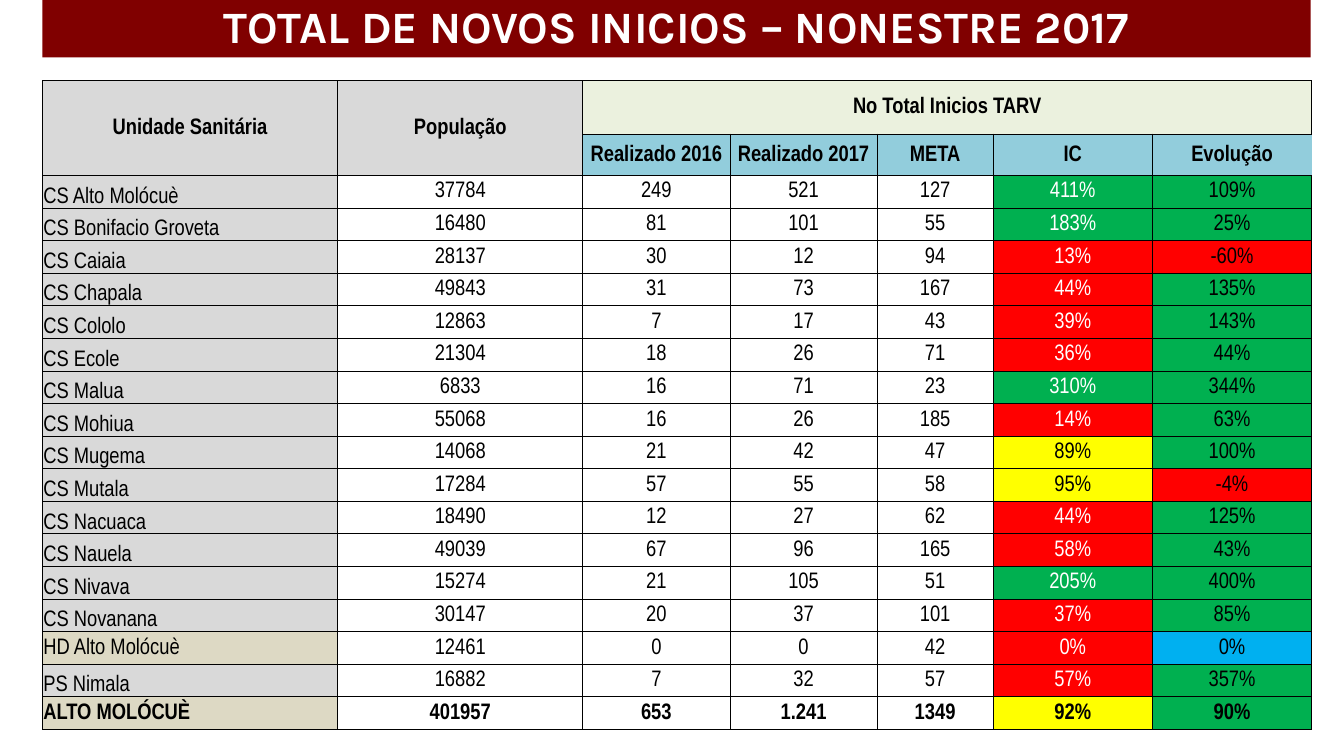
from lxml import etree
from pptx import Presentation
from pptx import util as u
from pptx.dml.color import RGBColor
from pptx.enum import shapes, text
from pptx.oxml import ns

GREEN, RED, YELLOW, BLUE = "00B050", "FF0000", "FFFF00", "00B0F0"
GREY, BEIGE, PALE_GREEN, TEAL = "D9D9D9", "DDD9C4", "EBF1DE", "92CDDC"
BLACK, WHITE, MAROON = "000000", "FFFFFF", "800000"

COLUMN_WIDTHS = [2.93, 2.43, 1.46, 1.46, 1.15, 1.58, 1.58]
TABLE_BOX = (0.42, 0.8, 12.58, 6.44)
HEADER_HEIGHTS = [0.53, 0.41]
SUBHEADINGS = ["Realizado 2016", "Realizado 2017", "META", "IC", "Evolução"]

# Unit, population, 2016, 2017, target, IC %, evolution %
UNITS = [
    ("CS Alto Molócuè", "37784", "249", "521", "127", 411, 109),
    ("CS Bonifacio Groveta", "16480", "81", "101", "55", 183, 25),
    ("CS Caiaia", "28137", "30", "12", "94", 13, -60),
    ("CS Chapala", "49843", "31", "73", "167", 44, 135),
    ("CS Cololo", "12863", "7", "17", "43", 39, 143),
    ("CS Ecole", "21304", "18", "26", "71", 36, 44),
    ("CS Malua", "6833", "16", "71", "23", 310, 344),
    ("CS Mohiua", "55068", "16", "26", "185", 14, 63),
    ("CS Mugema", "14068", "21", "42", "47", 89, 100),
    ("CS Mutala", "17284", "57", "55", "58", 95, -4),
    ("CS Nacuaca", "18490", "12", "27", "62", 44, 125),
    ("CS Nauela", "49039", "67", "96", "165", 58, 43),
    ("CS Nivava", "15274", "21", "105", "51", 205, 400),
    ("CS Novanana", "30147", "20", "37", "101", 37, 85),
    ("HD Alto Molócuè", "12461", "0", "0", "42", 0, 0),
    ("PS Nimala", "16882", "7", "32", "57", 57, 357),
    ("ALTO MOLÓCUÈ", "401957", "653", "1.241", "1349", 92, 90),
]


def rgb(value):
    return RGBColor.from_string(value)


def coverage_fill(percent):
    return GREEN if percent > 100 else YELLOW if percent >= 80 else RED


def evolution_fill(percent):
    return GREEN if percent > 0 else RED if percent < 0 else BLUE


class SlideBuilder:
    CELL_FORMAT = {
        "margin_left": u.Inches(0.01),
        "margin_right": u.Inches(0.01),
        "margin_top": u.Inches(0.01),
        "margin_bottom": 0,
    }

    def __init__(self, presentation):
        self.slide = presentation.slides.add_slide(presentation.slide_layouts[6])

    def add_words(self, paragraph, words, align=text.PP_ALIGN.CENTER, color=BLACK,
                  **font_format):
        run = paragraph.add_run()
        run.text = words
        paragraph.alignment = align
        run.font.color.rgb = rgb(color)
        for name, value in font_format.items():
            setattr(run.font, name, value)

    def banner(self, words, left, top, width, height):
        shape = self.slide.shapes.add_shape(
            shapes.MSO_SHAPE.RECTANGLE, *map(u.Inches, (left, top, width, height)))
        shape.shadow.inherit = False
        shape.fill.solid()
        shape.fill.fore_color.rgb = rgb(MAROON)
        shape.line.fill.background()
        shape.text_frame.vertical_anchor = text.MSO_ANCHOR.MIDDLE
        paragraph = shape.text_frame.paragraphs[0]
        paragraph.line_spacing = 0.9
        self.add_words(paragraph, words, color=WHITE, name="Karla", size=u.Pt(32), bold=True)

    def table(self, box, widths, heights):
        table = self.slide.shapes.add_table(
            len(heights), len(widths), *map(u.Inches, box)).table
        table.first_row = table.horz_banding = False
        for column, width in zip(table.columns, widths):
            column.width = u.Inches(width)
        for row, height in zip(table.rows, heights):
            row.height = u.Inches(height)
        return table

    def borders(self, cell, sides):
        properties = cell._tc.get_or_add_tcPr()
        for side in "LRTB":
            line = etree.SubElement(properties, ns.qn("a:ln" + side), w=str(u.Pt(0.5)))
            if side in sides:
                fill = etree.SubElement(line, ns.qn("a:solidFill"))
                etree.SubElement(fill, ns.qn("a:srgbClr"), val=BLACK)
            else:
                etree.SubElement(line, ns.qn("a:noFill"))

    def cell(self, cell, words, fill=None, anchor=text.MSO_ANCHOR.MIDDLE,
             sides="LRTB", **style):
        for name, value in self.CELL_FORMAT.items():
            setattr(cell, name, value)
        cell.vertical_anchor = anchor
        self.borders(cell, sides)
        if fill:
            cell.fill.solid()
            cell.fill.fore_color.rgb = rgb(fill)
        else:
            cell.fill.background()
        if words:
            self.add_words(cell.text_frame.paragraphs[0], words,
                           name="Arial Narrow", size=u.Pt(16), **style)


def main():
    presentation = Presentation()
    presentation.slide_width = u.Inches(13.33)
    presentation.slide_height = u.Inches(7.5)
    builder = SlideBuilder(presentation)

    # Title banner
    builder.banner("TOTAL DE NOVOS INICIOS – NONESTRE 2017", 0.42, 0, 12.58, 0.57)

    # Table grid
    row_height = (TABLE_BOX[3] - sum(HEADER_HEIGHTS)) / len(UNITS)
    table = builder.table(TABLE_BOX, COLUMN_WIDTHS,
                          HEADER_HEIGHTS + [row_height] * len(UNITS))

    # Two header rows
    headings = ["Unidade Sanitária", "População", "No Total Inicios TARV"] + [""] * 4
    for column, heading in enumerate(headings):
        builder.cell(table.cell(0, column), heading,
                     GREY if column < 2 else PALE_GREEN, bold=True)
    for column, heading in enumerate(["", ""] + SUBHEADINGS):
        builder.cell(table.cell(1, column), heading, GREY if column < 2 else TEAL,
                     sides="LTB" if heading == "Evolução" else "LRTB", bold=True)
    for column in (0, 1):
        table.cell(0, column).merge(table.cell(1, column))
    table.cell(0, 2).merge(table.cell(0, 6))

    # One row per health unit, the total last
    for row, (unit, *counts, coverage, evolution) in enumerate(UNITS, 2):
        bold = unit == "ALTO MOLÓCUÈ"
        special = bold or unit.startswith("HD")
        builder.cell(table.cell(row, 0), unit, BEIGE if special else GREY,
                     text.MSO_ANCHOR.MIDDLE if special else text.MSO_ANCHOR.BOTTOM,
                     align=text.PP_ALIGN.LEFT, bold=bold)
        for column, count in enumerate(counts, 1):
            builder.cell(table.cell(row, column), count, bold=bold)
        fill = coverage_fill(coverage)
        builder.cell(table.cell(row, 5), f"{coverage}%", fill, bold=bold,
                     color=BLACK if fill == YELLOW else WHITE)
        builder.cell(table.cell(row, 6), f"{evolution}%", evolution_fill(evolution), bold=bold)

    presentation.save("out.pptx")


if __name__ == "__main__":
    main()
